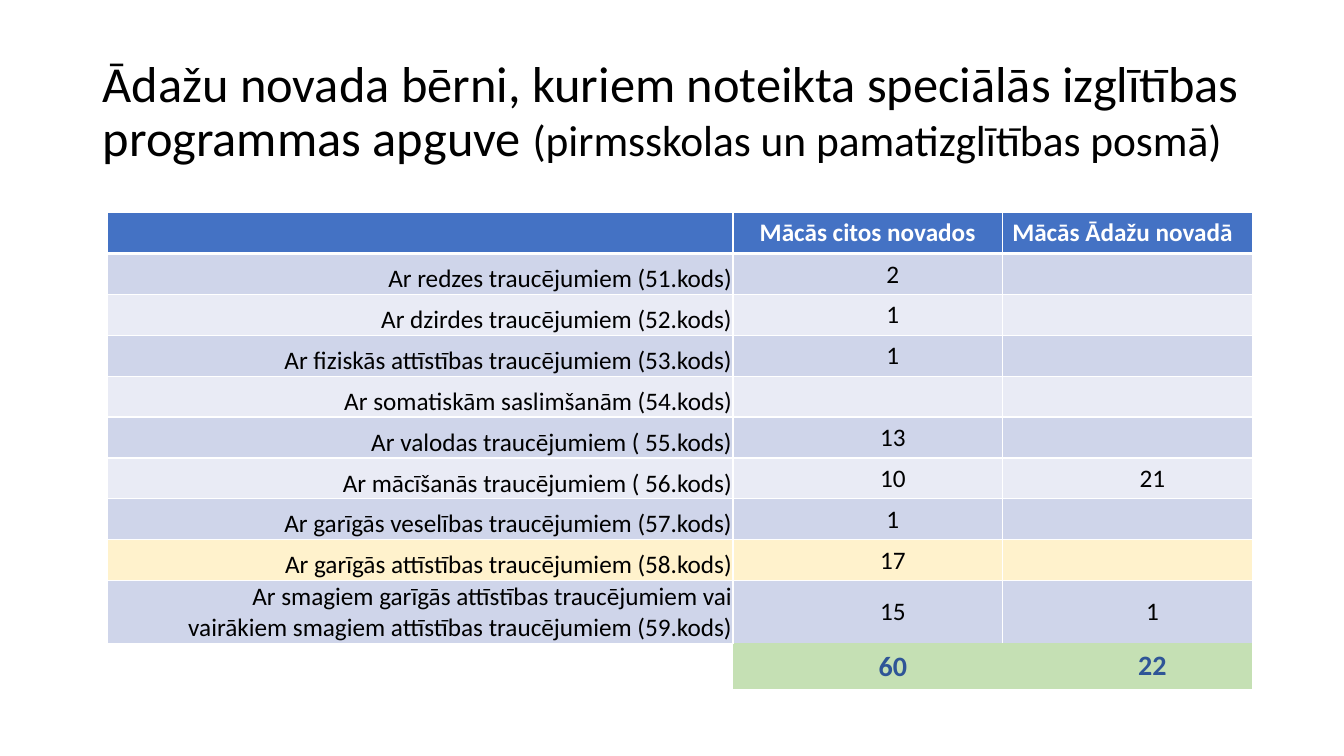
from lxml import etree
from pptx import Presentation, util as u
from pptx.dml.color import RGBColor
from pptx.enum import text
from pptx.oxml.ns import qn

HEADERS = ["", "Mācās citos novados", "Mācās Ādažu novadā"]
DISORDERS = [
    ("Ar redzes traucējumiem (51.kods)", "2", ""),
    ("Ar dzirdes traucējumiem (52.kods)", "1", ""),
    ("Ar fiziskās attīstības traucējumiem (53.kods)", "1", ""),
    ("Ar somatiskām saslimšanām (54.kods)", "", ""),
    ("Ar valodas traucējumiem ( 55.kods)", "13", ""),
    ("Ar mācīšanās traucējumiem ( 56.kods)", "10", "21"),
    ("Ar garīgās veselības traucējumiem (57.kods)", "1", ""),
    ("Ar garīgās attīstības traucējumiem (58.kods)", "17", ""),
    ("Ar smagiem garīgās attīstības traucējumiem vai vairākiem smagiem "
     "attīstības traucējumiem (59.kods)", "15", "1"),
]
TOTALS = ["", "60", "22"]
HIGHLIGHTED_ROW = 8
COLUMN_WIDTHS = [6.2, 2.67, 2.48]
ROW_HEIGHTS = [0.4] * 9 + [0.61, 0.46]


def colour(value):
    return RGBColor.from_string(value)


class EducationSlide:
    """Holds the style and the current slide, and draws its title and table."""

    font = "Calibri"
    black, white, blue, navy = "000000", "FFFFFF", "4472C4", "2F5597"
    bands = ["E9EBF5", "CFD5EA"]
    yellow, green = "FFF2CC", "C5E0B4"

    def __init__(self, deck):
        self.page = deck.slides.add_slide(deck.slide_layouts[5])

    def style(self, para, size, ink, bold=False):
        para.font.name = self.font
        para.font.size = u.Pt(size)
        para.font.bold = bold
        para.font.color.rgb = colour(ink)

    def title(self, main, detail):
        box = self.page.shapes.title
        box.left, box.top = u.Inches(0.92), u.Inches(0.4)
        box.width, box.height = u.Inches(11.5), u.Inches(1.45)
        frame = box.text_frame
        frame.word_wrap = True
        frame.auto_size = text.MSO_AUTO_SIZE.NONE
        frame.vertical_anchor = text.MSO_ANCHOR.MIDDLE
        para = frame.paragraphs[0]
        para.alignment = text.PP_ALIGN.LEFT
        para.line_spacing = 0.9
        self.style(para, 36, self.black)
        para.add_run().text = main
        span = para.add_run()
        span.text = detail
        span.font.size = u.Pt(31)

    def borders(self, cell, **widths):
        properties = cell._tc.get_or_add_tcPr()
        for side in "LRTB":
            width = widths.get(side, 1)
            line = etree.SubElement(properties, qn(f"a:ln{side}"), w=str(u.Pt(width)))
            if width:
                fill = etree.SubElement(line, qn("a:solidFill"))
                etree.SubElement(fill, qn("a:srgbClr"), val=self.white)
            else:
                etree.SubElement(line, qn("a:noFill"))

    def label(self, cell, words, size, ink, bold, align, indent):
        para = cell.text_frame.paragraphs[0]
        para.text = words
        para.alignment = align
        if indent:
            para.level = 1
            para._p.get_or_add_pPr().set("marL", str(u.Inches(0.5)))
        self.style(para, size, ink, bold)

    def tighten(self, cell):
        cell.margin_left = cell.margin_right = cell.margin_top = u.Inches(0.01)
        cell.margin_bottom = 0

    def header_cell(self, cell, column, words):
        self.borders(cell, B=3)
        cell.fill.solid()
        cell.fill.fore_color.rgb = colour(self.blue)
        align = text.PP_ALIGN.CENTER if column == 1 else text.PP_ALIGN.LEFT
        self.label(cell, words, 18, self.white, True, align, False)

    def body_cell(self, cell, row, column, words):
        self.borders(cell, B=0 if row == len(DISORDERS) and column else 1)
        cell.fill.solid()
        band = self.yellow if row == HIGHLIGHTED_ROW else self.bands[row % 2]
        cell.fill.fore_color.rgb = colour(band)
        if words:
            if column < 2:
                self.tighten(cell)
            first = column == 0
            cell.vertical_anchor = text.MSO_ANCHOR.BOTTOM if first else text.MSO_ANCHOR.MIDDLE
            align = text.PP_ALIGN.RIGHT if first else text.PP_ALIGN.CENTER
            self.label(cell, words, 18, self.black, False, align, True)

    def total_cell(self, cell, column, words):
        if column == 0:
            self.borders(cell, R=0)
            cell.fill.background()
            return
        self.borders(cell, L=0, R=0, T=0, B=0)
        cell.fill.solid()
        cell.fill.fore_color.rgb = colour(self.green)
        if column == 1:
            self.tighten(cell)
        cell.vertical_anchor = text.MSO_ANCHOR.MIDDLE
        self.label(cell, words, 20, self.navy, True, text.PP_ALIGN.CENTER, True)

    def table(self):
        rows = [HEADERS, *DISORDERS, TOTALS]
        frame = self.page.shapes.add_table(
            len(rows), len(HEADERS), u.Inches(1.07), u.Inches(2.11),
            u.Inches(sum(COLUMN_WIDTHS)), u.Inches(sum(ROW_HEIGHTS)))
        grid = frame.table
        grid.horz_banding = False
        for column, width in zip(grid.columns, COLUMN_WIDTHS):
            column.width = u.Inches(width)
        for row, height in zip(grid.rows, ROW_HEIGHTS):
            row.height = u.Inches(height)
        for row, entries in enumerate(rows):
            for column, words in enumerate(entries):
                cell = grid.cell(row, column)
                if row == 0:
                    self.header_cell(cell, column, words)
                elif row <= len(DISORDERS):
                    self.body_cell(cell, row, column, words)
                else:
                    self.total_cell(cell, column, words)


def main():
    deck = Presentation()
    deck.slide_width, deck.slide_height = u.Inches(13.33), u.Inches(7.5)
    slide = EducationSlide(deck)
    slide.title("Ādažu novada bērni, kuriem noteikta speciālās izglītības programmas apguve ",
                "(pirmsskolas un pamatizglītības posmā)")
    slide.table()
    deck.save("out.pptx")


if __name__ == "__main__":
    main()
